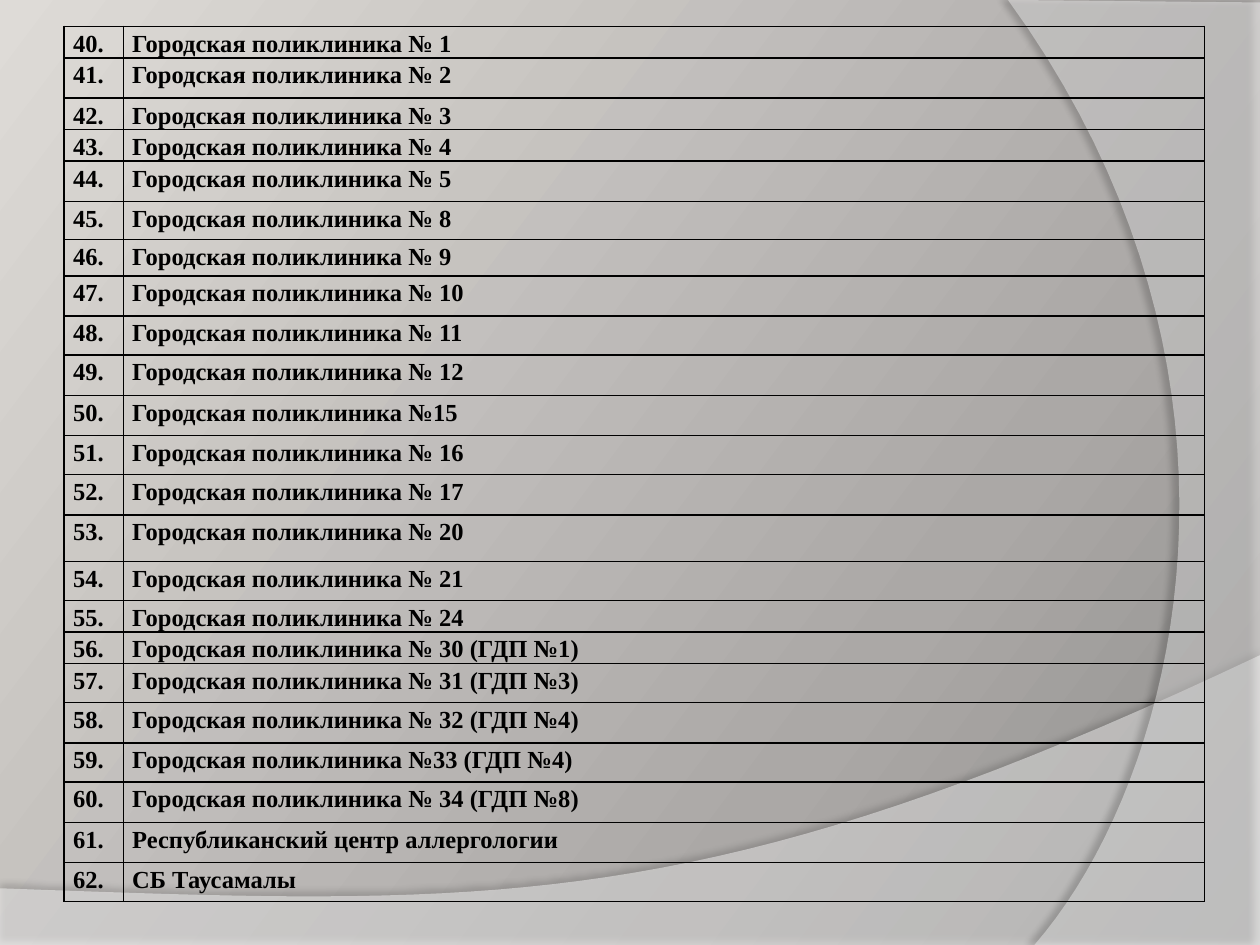
"""Build a slide with a numbered table of city clinics over a curved grey background."""
from pptx import Presentation
from pptx.dml.color import RGBColor
from pptx.oxml import parse_xml
from pptx.oxml.ns import nsdecls
from pptx.util import Inches, Pt


def rgb(h):
    return RGBColor.from_string(h)


def add_wave(s, start, curve, rest, alpha, shade, direction):
    pts = []
    for i in range(1, 41):
        t = i / 40
        w = ((1 - t) ** 3, 3 * t * (1 - t) ** 2, 3 * t * t * (1 - t), t ** 3)
        pts.append(tuple(Inches(sum(k * p[a] for k, p in zip(w, [start] + curve))) for a in (0, 1)))
    pts += [(Inches(x), Inches(y)) for x, y in rest]
    fb = s.shapes.build_freeform(Inches(start[0]), Inches(start[1]))
    fb.add_line_segments(pts, close=True)
    sp = fb.convert_to_shape()
    sp.fill.solid()
    sp.fill.fore_color.rgb = rgb("FFFFFF")
    sp.fill._xPr.solidFill[0].append(parse_xml(f'<a:alpha {nsdecls("a")} val="{alpha * 1000}"/>'))
    sp.line.fill.background()
    sp._element.spPr.append(parse_xml(
        f'<a:effectLst {nsdecls("a")}><a:outerShdw blurRad="{Pt(4)}" dist="{Pt(shade[1])}" '
        f'dir="{direction * 60000}" algn="ctr" rotWithShape="0"><a:srgbClr val="000000">'
        f'<a:alpha val="{shade[0] * 1000}"/></a:srgbClr></a:outerShdw></a:effectLst>'))


prs = Presentation()
prs.slide_width, prs.slide_height = Inches(10), Inches(7.5)
s = prs.slides.add_slide(prs.slide_layouts[6])

stops = "".join(f'<a:gs pos="{pos * 1000}"><a:srgbClr val="{c}"/></a:gs>'
                for pos, c in ((0, "8F8D8B"), (30, "ABA8A6"), (100, "DEDBD7")))
s.element.cSld.insert(0, parse_xml(
    f'<p:bg {nsdecls("p", "a")}><p:bgPr><a:gradFill rotWithShape="1"><a:gsLst>{stops}</a:gsLst>'
    f'<a:lin ang="{217 * 60000}" scaled="0"/></a:gradFill><a:effectLst/></p:bgPr></p:bg>'))

add_wave(s, (10, 5.2), [(5.59, 7.29), (3.91, 7.19), (0, 7.05)],
         [(0, 7.51), (10, 7.51)], 45, (35, 3.5), 270)
add_wave(s, (8.21, 7.5), [(9.35, 6.19), (10.18, 3), (8, 0)],
         [(10, 0.02), (10, 7.5)], 40, (45, 4), 180)

clinics = ["№ 1", "№ 2", "№ 3", "№ 4", "№ 5", "№ 8", "№ 9", "№ 10", "№ 11", "№ 12", "№15",
           "№ 16", "№ 17", "№ 20", "№ 21", "№ 24", "№ 30 (ГДП №1)", "№ 31 (ГДП №3)",
           "№ 32 (ГДП №4)", "№33 (ГДП №4)", "№ 34 (ГДП №8)"]
names = [f"Городская поликлиника {c}" for c in clinics]
names += ["Республиканский центр аллергологии", "СБ Таусамалы"]
heights = [0.25, 0.32, 0.25, 0.25, 0.32, 0.3, 0.29, 0.32, 0.31, 0.32, 0.32, 0.31,
           0.32, 0.37, 0.31, 0.25, 0.25, 0.31, 0.32, 0.31, 0.32, 0.32, 0.31]
widths = [0.47, 8.58]

tbl = s.shapes.add_table(len(names), 2, Inches(0.51), Inches(0.21),
                         Inches(sum(widths)), Inches(sum(heights))).table
tbl.first_row = tbl.horz_banding = False
for col, w in zip(tbl.columns, widths):
    col.width = Inches(w)

for i, (name, h) in enumerate(zip(names, heights)):
    tbl.rows[i].height = Inches(h)
    for j, text in enumerate((f"{40 + i}.", name)):
        cell = tbl.cell(i, j)
        cell.margin_left = cell.margin_right = Inches(0.07)
        cell.margin_top = cell.margin_bottom = 0
        cell.fill.background()
        tcPr = cell._tc.get_or_add_tcPr()
        for k, side in enumerate(("lnL", "lnR", "lnT", "lnB")):
            tcPr.insert(k, parse_xml(
                f'<a:{side} {nsdecls("a")} w="{Pt(1)}"><a:solidFill><a:srgbClr val="000000"/>'
                f'</a:solidFill></a:{side}>'))
        p = cell.text_frame.paragraphs[0]
        p.line_spacing = 1.15
        r = p.add_run()
        r.text = text
        r.font.name, r.font.size, r.font.bold = "Times New Roman", Pt(14), True
        r.font.color.rgb = rgb("000000")

prs.save("out.pptx")
